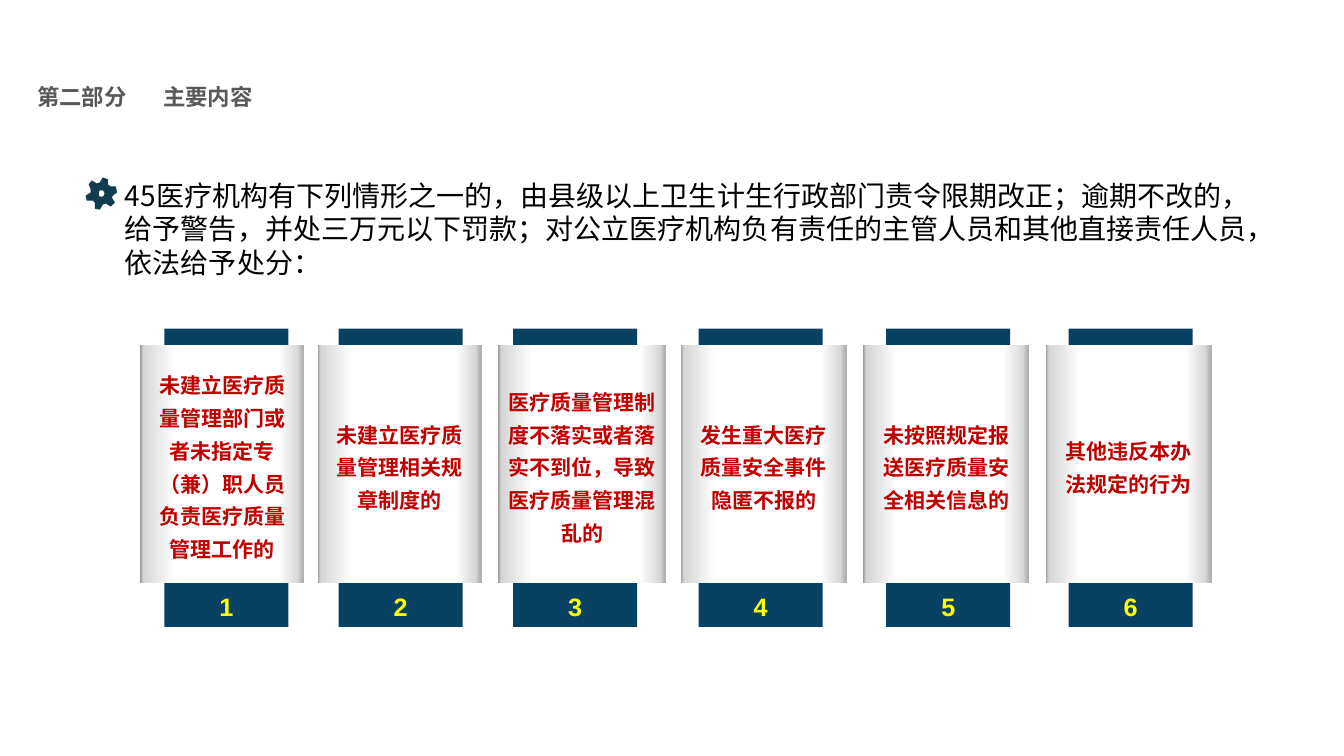
"""Build the slide on the six cases in which a medical institution is penalised."""
from math import cos, pi, sin

from lxml.etree import SubElement
from pptx import Presentation
from pptx.dml.color import RGBColor
from pptx.enum.shapes import MSO_SHAPE
from pptx.enum.text import MSO_ANCHOR, MSO_AUTO_SIZE, PP_ALIGN
from pptx.oxml.ns import qn
from pptx.util import Inches, Pt

CJK = "Noto Sans CJK SC"
GREY = RGBColor(0x59, 0x59, 0x59)
BLACK = RGBColor(0, 0, 0)
TEAL = RGBColor(0x0F, 0x3D, 0x4C)
NAVY = RGBColor(0x09, 0x41, 0x62)
RED = RGBColor(0xC0, 0, 0)
YELLOW = RGBColor(0xFF, 0xFF, 0)
SCROLL_STOPS = [
    (0, RGBColor(0x95, 0x95, 0x95)), (2, RGBColor(0xD6, 0xD6, 0xD6)),
    (21, RGBColor(0xFF, 0xFF, 0xFF)), (85, RGBColor(0xFC, 0xFC, 0xFC)),
    (96, RGBColor(0xD8, 0xD8, 0xD8)), (99, RGBColor(0xB2, 0xB2, 0xB2)),
    (100, RGBColor(0xB2, 0xB2, 0xB2)),
]
BAR_TOP, BAR_WIDTH, BAR_HEIGHT = 3.26, 1.23, 2.96
SCROLL_TOP, SCROLL_HEIGHT = 3.42, 2.36
CASES = [
    (1.63, 1.39, 1.63, "未建立医疗质量管理部门或者未指定专（兼）职人员负责医疗质量管理工作的"),
    (3.36, 3.15, 1.63, "未建立医疗质量管理相关规章制度的"),
    (5.09, 4.94, 1.67, "医疗质量管理制度不落实或者落实不到位，导致医疗质量管理混乱的"),
    (6.93, 6.75, 1.65, "发生重大医疗质量安全事件隐匿不报的"),
    (8.79, 8.56, 1.65, "未按照规定报送医疗质量安全相关信息的"),
    (10.6, 10.37, 1.65, "其他违反本办法规定的行为"),
]
GEAR_OUTLINE = [
    (111, 196), (112, 194), (116, 191), (115, 185), (110, 185), (107, 183),
    (107, 178), (102, 176), (99, 181), (96, 182), (91, 179), (88, 183),
    (90, 188), (90, 191), (85, 194), (86, 199), (92, 199), (94, 201),
    (94, 207), (99, 208), (102, 203), (105, 202), (110, 205), (114, 201),
]


def write_text(shape, text, font_name, size, color, bold, anchor, align, spacing):
    frame = shape.text_frame
    frame.word_wrap = True
    frame.auto_size = MSO_AUTO_SIZE.NONE
    frame.vertical_anchor = anchor
    paragraph = frame.paragraphs[0]
    paragraph.text = text
    paragraph.alignment = align
    paragraph.line_spacing = spacing
    paragraph.space_before = Pt(0)
    font = paragraph.font
    font.name, font.size, font.bold = font_name, Pt(size), bold
    font.color.rgb = color
    defaults = paragraph._p.pPr.find(qn("a:defRPr"))
    SubElement(defaults, qn("a:ea"), typeface=font_name)


def add_panel(left, top, width, height):
    shape = slide.shapes.add_shape(
        MSO_SHAPE.RECTANGLE, Inches(left), Inches(top), Inches(width), Inches(height))
    shape.shadow.inherit = False
    shape.line.fill.background()
    return shape


presentation = Presentation()
presentation.slide_width = Inches(13.33)
presentation.slide_height = Inches(7.5)
slide = presentation.slides.add_slide(presentation.slide_layouts[2])

for placeholder, left, width, text in [
    (slide.shapes.title, 1.52, 3.1, "主要内容"),
    (slide.placeholders[1], 0.27, 1.12, "第二部分"),
]:
    placeholder.left, placeholder.top = Inches(left), Inches(0.79)
    placeholder.width, placeholder.height = Inches(width), Inches(0.37)
    write_text(placeholder, text, CJK, 16, GREY, True, MSO_ANCHOR.MIDDLE, PP_ALIGN.LEFT, 0.9)

article = slide.shapes.add_textbox(Inches(1.14), Inches(1.72), Inches(11.43), Inches(1.12))
write_text(
    article,
    "45医疗机构有下列情形之一的，由县级以上卫生计生行政部门责令限期改正；逾期不改的，"
    "给予警告，并处三万元以下罚款；对公立医疗机构负有责任的主管人员和其他直接责任人员，"
    "依法给予处分：",
    CJK, 20, BLACK, False, MSO_ANCHOR.TOP, PP_ALIGN.LEFT, 1.0)

builder = slide.shapes.build_freeform(*GEAR_OUTLINE[0], scale=Inches(0.01))
builder.add_line_segments(GEAR_OUTLINE[1:], close=True)
hub = [(100.5 + 3 * cos(step * pi / 8), 192 + 3 * sin(step * pi / 8)) for step in range(16)]
builder.move_to(*hub[0])
builder.add_line_segments(hub[1:], close=True)
gear = builder.convert_to_shape()
gear.shadow.inherit = False
gear.fill.solid()
gear.fill.fore_color.rgb = TEAL
gear.line.fill.background()

for number, (bar_left, scroll_left, scroll_width, text) in enumerate(CASES, start=1):
    bar = add_panel(bar_left, BAR_TOP, BAR_WIDTH, BAR_HEIGHT)
    bar.fill.solid()
    bar.fill.fore_color.rgb = NAVY
    write_text(bar, str(number), "Arial", 18, YELLOW, True,
               MSO_ANCHOR.BOTTOM, PP_ALIGN.CENTER, 1.0)

    scroll = add_panel(scroll_left, SCROLL_TOP, scroll_width, SCROLL_HEIGHT)
    scroll.fill.gradient()
    scroll.fill.gradient_angle = 0
    stops = scroll._element.spPr.find(qn("a:gradFill")).find(qn("a:gsLst"))
    for stop in list(stops):
        stops.remove(stop)
    for percent, color in SCROLL_STOPS:
        stop = SubElement(stops, qn("a:gs"), pos=str(percent * 1000))
        SubElement(stop, qn("a:srgbClr"), val=str(color))
    write_text(scroll, text, CJK, 15, RED, True, MSO_ANCHOR.MIDDLE, PP_ALIGN.CENTER, 1.3)

presentation.save("out.pptx")
